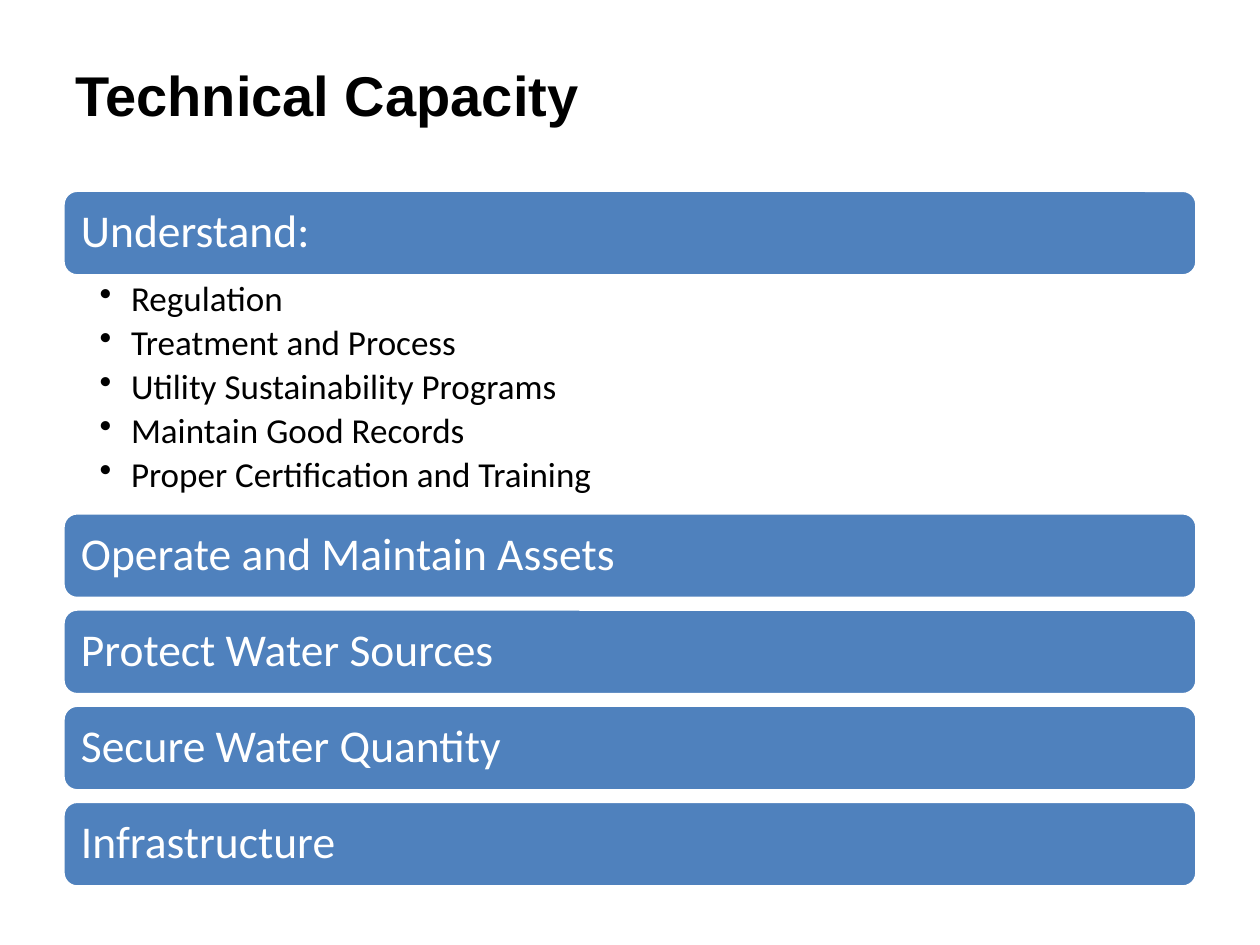
from dataclasses import dataclass

from lxml import etree
from pptx import Presentation
from pptx import util as u
from pptx.dml.color import RGBColor
from pptx.enum import shapes, text
from pptx.oxml import ns


@dataclass(frozen=True)
class Theme:
    bar: RGBColor = RGBColor.from_string("4F81BD")
    light: RGBColor = RGBColor.from_string("FFFFFF")
    dark: RGBColor = RGBColor.from_string("000000")
    heading_font: str = "Arial"
    body_font: str = "Calibri"
    title_size: u.Pt = u.Pt(32)
    bar_size: u.Pt = u.Pt(26)
    bullet_size: u.Pt = u.Pt(20)


THEME = Theme()
LEFT, WIDTH = 0.5, 9
BAR_HEIGHT = 0.68
FIRST_BAR_TOP = 1.51
LOWER_BARS_TOP, LAST_BAR_TOP = 4.07, 6.36
LOWER_BARS = [
    "Operate and Maintain Assets",
    "Protect Water Sources",
    "Secure Water Quantity",
    "Infrastructure",
]
TOPICS = [
    "Regulation",
    "Treatment and Process",
    "Utility Sustainability Programs",
    "Maintain Good Records",
    "Proper Certification and Training",
]


def apply(target, formats):
    for name, value in formats.items():
        setattr(target, name, value)


def set_frame(tf, anchor, margins):
    left, top, right, bottom = map(u.Inches, margins)
    apply(tf, {
        "word_wrap": True, "vertical_anchor": anchor,
        "margin_left": left, "margin_top": top,
        "margin_right": right, "margin_bottom": bottom,
    })


def write(p, words, color, spacing=None, **font):
    p.alignment = text.PP_ALIGN.LEFT
    p.line_spacing = spacing
    r = p.add_run()
    r.text = words
    apply(r.font, font)
    r.font.color.rgb = color


def add_box(s, top, height):
    return s.shapes.add_textbox(*map(u.Inches, (LEFT, top, WIDTH, height))).text_frame


def add_title(s, words):
    tf = add_box(s, 0.12, 1.25)
    set_frame(tf, text.MSO_ANCHOR.MIDDLE, (0.1, 0.05, 0.1, 0.05))
    write(tf.paragraphs[0], words, THEME.dark,
          name=THEME.heading_font, size=THEME.title_size, bold=True)


def add_bar(s, top, words):
    sp = s.shapes.add_shape(shapes.MSO_SHAPE.ROUNDED_RECTANGLE,
                            *map(u.Inches, (LEFT, top, WIDTH, BAR_HEIGHT)))
    sp.shadow.inherit = False
    sp.fill.solid()
    sp.fill.fore_color.rgb = THEME.bar
    sp.line.color.rgb = THEME.light
    sp.line.width = u.Pt(2)
    set_frame(sp.text_frame, text.MSO_ANCHOR.MIDDLE, (0.11,) * 4)
    write(sp.text_frame.paragraphs[0], words, THEME.light, 0.9,
          name=THEME.body_font, size=THEME.bar_size)


def add_bullet(p):
    pPr = p._p.get_or_add_pPr()
    indent = u.Inches(0.25)
    pPr.set("marL", str(indent))
    pPr.set("indent", str(-indent))
    etree.SubElement(pPr, ns.qn("a:buChar")).set("char", "•")


def add_bullet_list(s, top, items):
    tf = add_box(s, top, LOWER_BARS_TOP - top)
    set_frame(tf, text.MSO_ANCHOR.TOP, (0.29, 0.04, 0.2, 0.04))
    for i, item in enumerate(items):
        p = tf.add_paragraph() if i else tf.paragraphs[0]
        write(p, item, THEME.dark, 0.9, name=THEME.body_font, size=THEME.bullet_size)
        apply(p, {"level": 1, "space_after": u.Pt(3.6)})
        add_bullet(p)


def main():
    prs = Presentation()
    apply(prs, {"slide_width": u.Inches(10), "slide_height": u.Inches(7.5)})
    s = prs.slides.add_slide(prs.slide_layouts[6])
    add_title(s, "Technical Capacity")
    add_bar(s, FIRST_BAR_TOP, "Understand:")
    add_bullet_list(s, FIRST_BAR_TOP + BAR_HEIGHT, TOPICS)
    pitch = (LAST_BAR_TOP - LOWER_BARS_TOP) / (len(LOWER_BARS) - 1)
    for i, words in enumerate(LOWER_BARS):
        add_bar(s, LOWER_BARS_TOP + i * pitch, words)
    prs.save("out.pptx")


if __name__ == "__main__":
    main()
